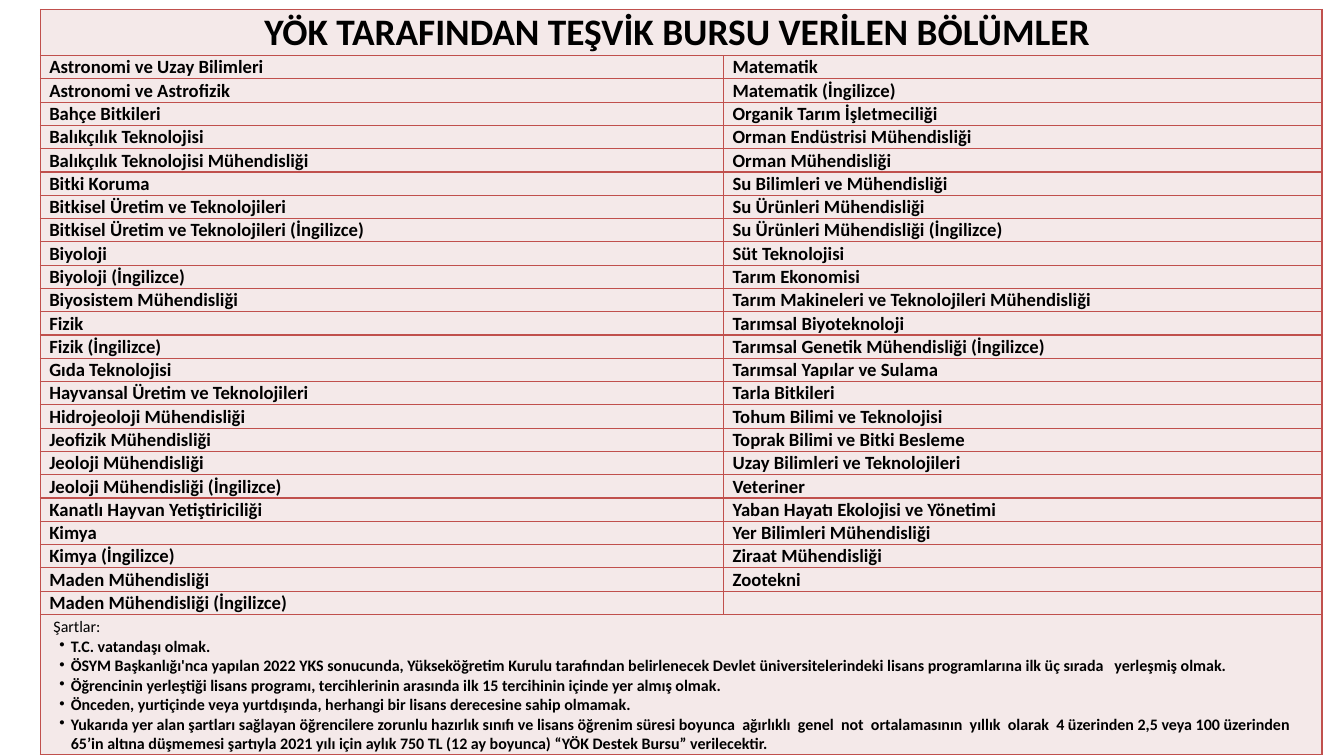
from lxml import etree
from pptx import Presentation
from pptx.dml.color import RGBColor
from pptx.enum.text import MSO_ANCHOR, PP_ALIGN
from pptx.oxml.ns import qn
from pptx.util import Cm, Pt

MIDDLE, TOP = MSO_ANCHOR.MIDDLE, MSO_ANCHOR.TOP
CENTER, LEFT = PP_ALIGN.CENTER, PP_ALIGN.LEFT
BLACK, PINK, RED = "000000", "F4E9E9", "C0504D"

HEADING = "YÖK TARAFINDAN TEŞVİK BURSU VERİLEN BÖLÜMLER"
LEFT_DEPARTMENTS = [
    "Astronomi ve Uzay Bilimleri",
    "Astronomi ve Astrofizik",
    "Bahçe Bitkileri",
    "Balıkçılık Teknolojisi",
    "Balıkçılık Teknolojisi Mühendisliği",
    "Bitki Koruma",
    "Bitkisel Üretim ve Teknolojileri",
    "Bitkisel Üretim ve Teknolojileri (İngilizce)",
    "Biyoloji",
    "Biyoloji (İngilizce)",
    "Biyosistem Mühendisliği",
    "Fizik",
    "Fizik (İngilizce)",
    "Gıda Teknolojisi",
    "Hayvansal Üretim ve Teknolojileri",
    "Hidrojeoloji Mühendisliği",
    "Jeofizik Mühendisliği",
    "Jeoloji Mühendisliği",
    "Jeoloji Mühendisliği (İngilizce)",
    "Kanatlı Hayvan Yetiştiriciliği",
    "Kimya",
    "Kimya (İngilizce)",
    "Maden Mühendisliği",
    "Maden Mühendisliği (İngilizce)",
]
RIGHT_DEPARTMENTS = [
    "Matematik",
    "Matematik (İngilizce)",
    "Organik Tarım İşletmeciliği",
    "Orman Endüstrisi Mühendisliği",
    "Orman Mühendisliği",
    "Su Bilimleri ve Mühendisliği",
    "Su Ürünleri Mühendisliği",
    "Su Ürünleri Mühendisliği (İngilizce)",
    "Süt Teknolojisi",
    "Tarım Ekonomisi",
    "Tarım Makineleri ve Teknolojileri Mühendisliği",
    "Tarımsal Biyoteknoloji",
    "Tarımsal Genetik Mühendisliği (İngilizce)",
    "Tarımsal Yapılar ve Sulama",
    "Tarla Bitkileri",
    "Tohum Bilimi ve Teknolojisi",
    "Toprak Bilimi ve Bitki Besleme",
    "Uzay Bilimleri ve Teknolojileri",
    "Veteriner",
    "Yaban Hayatı Ekolojisi ve Yönetimi",
    "Yer Bilimleri Mühendisliği",
    "Ziraat Mühendisliği",
    "Zootekni",
    "",
]
CONDITIONS = [
    "T.C. vatandaşı olmak.",
    "ÖSYM Başkanlığı'nca yapılan 2022 YKS sonucunda, Yükseköğretim Kurulu tarafından "
    "belirlenecek Devlet üniversitelerindeki lisans programlarına ilk üç sırada   yerleşmiş olmak.",
    "Öğrencinin yerleştiği lisans programı, tercihlerinin arasında ilk 15 tercihinin "
    "içinde yer almış olmak.",
    "Önceden, yurtiçinde veya yurtdışında, herhangi bir lisans derecesine sahip olmamak.",
    "Yukarıda yer alan şartları sağlayan öğrencilere zorunlu hazırlık sınıfı ve lisans "
    "öğrenim süresi boyunca  ağırlıklı  genel  not  ortalamasının  yıllık  olarak  "
    "4 üzerinden 2,5 veya 100 üzerinden 65’in altına düşmemesi şartıyla 2021 yılı için "
    "aylık 750 TL (12 ay boyunca) “YÖK Destek Bursu” verilecektir.",
]


def colour(value):
    return RGBColor.from_string(value)


def apply(target, values):
    for name, value in values.items():
        setattr(target, name, value)


def write(para, text, size, bold=True, align=LEFT, margin=0, indent=0, bullet=None):
    para.alignment = align
    properties = para._p.get_or_add_pPr()
    properties.set("marL", str(Cm(margin)))
    properties.set("indent", str(Cm(indent)))
    if bullet:
        etree.SubElement(properties, qn("a:buChar")).set("char", bullet)
    if not text:
        para._p.get_or_add_endParaRPr().set("sz", str(size * 100))
        return
    span = para.add_run()
    span.text = text
    apply(span.font, {"name": "Calibri", "size": Pt(size), "bold": bold})
    span.font.color.rgb = colour(BLACK)


def format_cell(cell):
    inset = Pt(0.4)
    apply(cell, {
        "margin_left": inset, "margin_right": inset,
        "margin_top": inset, "margin_bottom": 0, "vertical_anchor": TOP,
    })
    properties = cell._tc.get_or_add_tcPr()
    for side in ("lnL", "lnR", "lnT", "lnB"):
        border = etree.SubElement(properties, qn(f"a:{side}"), w=str(Pt(1)))
        fill = etree.SubElement(border, qn("a:solidFill"))
        etree.SubElement(fill, qn("a:srgbClr"), val=RED)
    cell.fill.solid()
    cell.fill.fore_color.rgb = colour(PINK)


def fill_heading(cell):
    apply(cell, {"vertical_anchor": MIDDLE, "margin_right": Cm(0.24)})
    write(cell.text_frame.paragraphs[0], HEADING, 28, align=CENTER)


def fill_departments(table):
    for row, names in enumerate(zip(LEFT_DEPARTMENTS, RIGHT_DEPARTMENTS), start=1):
        for column, name in enumerate(names):
            write(table.cell(row, column).text_frame.paragraphs[0], name, 14, margin=0.22)


def fill_conditions(cell):
    cell.margin_top = Pt(2.4)
    frame = cell.text_frame
    write(frame.paragraphs[0], "Şartlar:", 12, bold=False, margin=0.33)
    for condition in CONDITIONS:
        write(frame.add_paragraph(), condition, 12, margin=0.79, indent=-0.3, bullet="•")


def add_scholarship_table(page, left, top, width, height):
    count = len(LEFT_DEPARTMENTS)
    heading_height, department_height = Cm(1.2), Cm(0.61)
    conditions_height = height - heading_height - count * department_height
    box = page.shapes.add_table(count + 2, 2, left, top, width, height)
    table = box.table
    apply(table, {"first_row": False, "horz_banding": False})
    first_width = Cm(18.08)
    for column, size in zip(table.columns, (first_width, width - first_width)):
        column.width = size
    heights = [heading_height] + [department_height] * count + [conditions_height]
    for row, size in zip(table.rows, heights):
        row.height = size
    for cell in table.iter_cells():
        format_cell(cell)
    for row in (0, count + 1):
        table.cell(row, 0).merge(table.cell(row, 1))
    fill_heading(table.cell(0, 0))
    fill_departments(table)
    fill_conditions(table.cell(count + 1, 0))


def main():
    deck = Presentation()
    apply(deck, {"slide_width": Cm(35.56), "slide_height": Cm(20)})
    page = deck.slides.add_slide(deck.slide_layouts[6])
    add_scholarship_table(page, Cm(1.07), Cm(0.25), Cm(33.91), Cm(19.43))
    deck.save("out.pptx")


if __name__ == "__main__":
    main()
